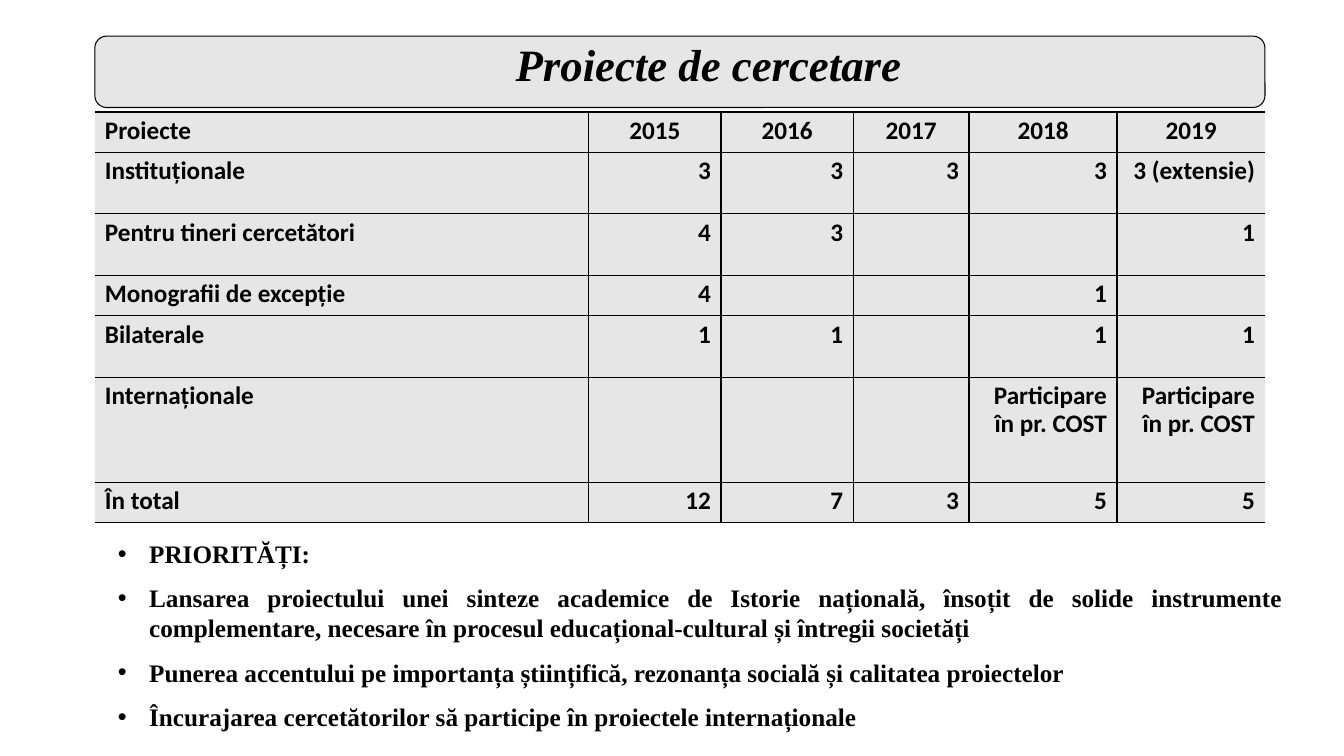
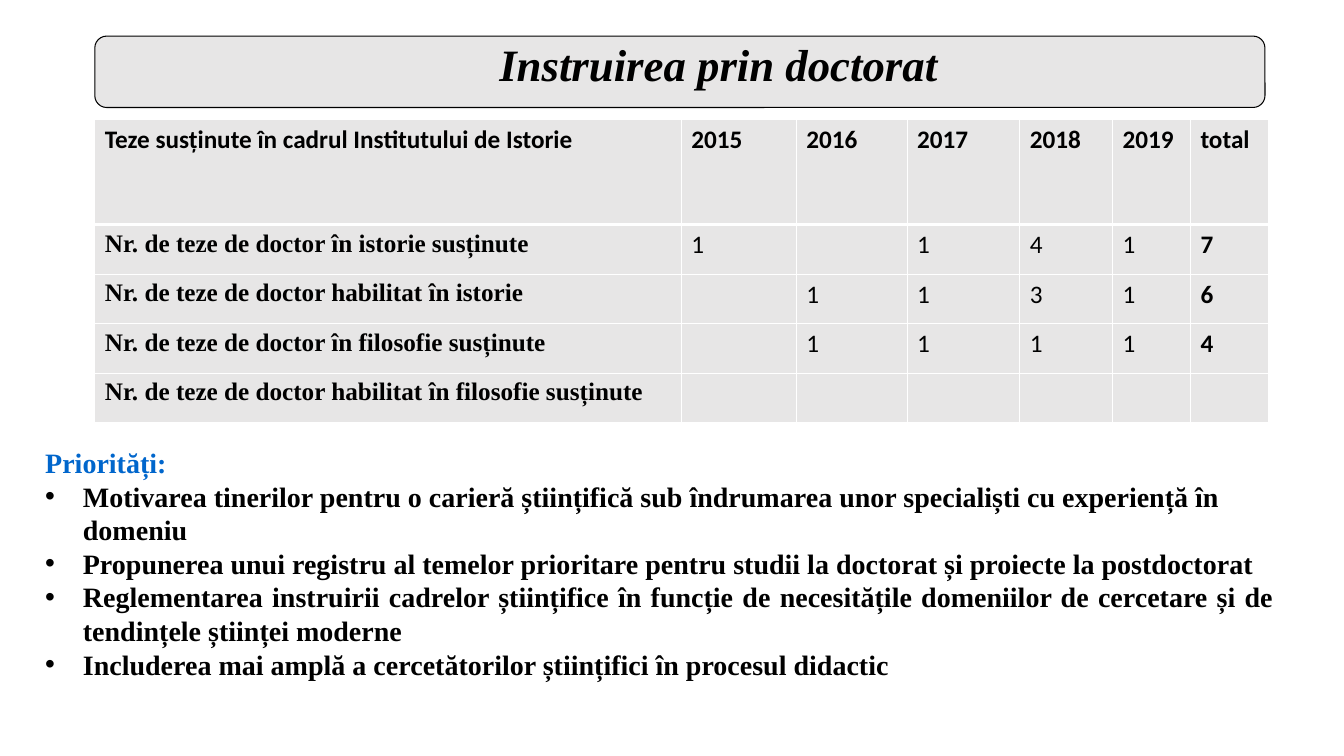
from lxml.etree import SubElement as Sub
from pptx import Presentation
from pptx.dml.color import RGBColor as Rgb
from pptx.enum.shapes import MSO_SHAPE as Form
from pptx.enum.text import MSO_ANCHOR as Anchor, PP_ALIGN as Align
from pptx.oxml.ns import qn
from pptx.util import Cm, Pt

COLORS = {"ink": "000000", "band": "E7E6E6", "white": "FFFFFF", "blue": "0066CC"}
SERIF, SANS = "Times New Roman", "Calibri"
LEFT = 2.39


def color(name):
    return Rgb.from_string(COLORS[name])


class Deck:
    def __init__(self):
        self.prs = Presentation()
        self.prs.slide_width, self.prs.slide_height = Cm(33.87), Cm(19.05)
        self.slide = None

    def style(self, para, size, font=SERIF, bold=True, tint="ink", italic=False):
        for run in para.runs:
            face = run.font
            face.name, face.size = font, Pt(size)
            face.bold, face.italic = bold, italic
            face.color.rgb = color(tint)

    def box(self, x, y, w, h):
        frame = self.slide.shapes.add_textbox(Cm(x), Cm(y), Cm(w), Cm(h)).text_frame
        frame.word_wrap = True
        return frame

    # New slide with its title band; mid is the centre of the title
    def start(self, title, mid):
        self.slide = self.prs.slides.add_slide(self.prs.slide_layouts[6])
        band = self.slide.shapes.add_shape(
            Form.ROUNDED_RECTANGLE, Cm(LEFT), Cm(0.91), Cm(29.49), Cm(1.8))
        band.shadow.inherit = False
        band.fill.solid()
        band.fill.fore_color.rgb = color("band")
        band.line.color.rgb = color("ink")
        band.line.width = Pt(0.75)
        wide = 25
        frame = self.box(mid - wide / 2, 0.64, wide, 2.08)
        frame.vertical_anchor = Anchor.MIDDLE
        para = frame.paragraphs[0]
        para.text = title
        para.alignment, para.line_spacing = Align.CENTER, 0.9
        self.style(para, 32, italic=True)

    # Cell borders: a width of 0 hides the side
    def edges(self, cell, tint, widths):
        props = cell._tc.get_or_add_tcPr()
        for side, width in zip("LRTB", widths):
            line = Sub(props, qn(f"a:ln{side}"), w=str(Pt(width)))
            if width:
                fill = Sub(line, qn("a:solidFill"))
                Sub(fill, qn("a:srgbClr"), val=COLORS[tint])
            else:
                Sub(line, qn("a:noFill"))

    # look(row, col) gives font, bold and alignment; sides(row, col) the borders
    def table(self, y, cols, rows, data, tint, look, sides, space=1.0):
        table = self.slide.shapes.add_table(
            len(rows), len(cols), Cm(LEFT), Cm(y), Cm(sum(cols)), Cm(sum(rows))).table
        table.first_row = table.horz_banding = False
        for col, width in zip(table.columns, cols):
            col.width = Cm(width)
        for r, (height, words) in enumerate(zip(rows, data)):
            table.rows[r].height = Cm(height)
            for c, word in enumerate(words):
                cell = table.cell(r, c)
                self.edges(cell, tint, sides(r, c))
                cell.fill.solid()
                cell.fill.fore_color.rgb = color("band")
                font, bold, align = look(r, c)
                para = cell.text_frame.paragraphs[0]
                para.text = word
                para.alignment, para.line_spacing = align, space
                self.style(para, 18, font, bold)

    # Items are (text, alignment); a head stands above them without a bullet
    def bullets(self, place, items, size, indent, gap=0, head=None):
        frame = self.box(*place)
        lines = ([(head, Align.LEFT)] if head else []) + items
        for i, (text, align) in enumerate(lines):
            para = frame.add_paragraph() if i else frame.paragraphs[0]
            para.text = text
            para.alignment = align
            para.space_before = Pt(gap if i else 0)
            first = head is not None and i == 0
            self.style(para, size, tint="blue" if first else "ink")
            if not first:
                props = para._p.get_or_add_pPr()
                props.set("marL", str(Cm(indent)))
                props.set("indent", str(-Cm(indent)))
                Sub(props, qn("a:buFont"), typeface="Arial")
                Sub(props, qn("a:buChar"), char="•")


def projects(deck):
    deck.start("Proiecte de cercetare", 17.86)
    data = [
        ["Proiecte", "2015", "2016", "2017", "2018", "2019"],
        ["Instituționale", "3", "3", "3", "3", "3 (extensie)"],
        ["Pentru tineri cercetători", "4", "3", "", "", "1"],
        ["Monografii de excepție", "4", "", "", "1", ""],
        ["Bilaterale", "1", "1", "", "1", "1"],
        ["Internaționale", "", "", "", "Participare în pr. COST",
         "Participare în pr. COST"],
        ["În total", "12", "7", "3", "5", "5"],
    ]

    def look(r, c):
        align = Align.LEFT if c == 0 else Align.RIGHT if r else Align.CENTER
        return SANS, True, align

    def sides(r, c):
        return int(c > 0), int(c < 5), 1, 1

    deck.table(2.82, [12.45, 3.33, 3.33, 2.92, 3.73, 3.73],
               [1.02, 1.55, 1.55, 1.02, 1.55, 2.64, 1.02],
               data, "ink", look, sides, space=0.9)
    goals = [
        "PRIORITĂȚI:",
        "Lansarea proiectului unei sinteze academice de Istorie națională, însoțit de "
        "solide instrumente complementare, necesare în procesul educațional-cultural "
        "și întregii societăți",
        "Punerea accentului pe importanța științifică, rezonanța socială și calitatea "
        "proiectelor",
        "Încurajarea cercetătorilor să participe în proiectele internaționale",
    ]
    deck.bullets((2.72, 13.44, 29.85, 5.26), [(g, Align.JUSTIFY) for g in goals],
                 18, 0.79, gap=10)


def theses(deck):
    deck.start("Instruirea prin doctorat", 18.11)
    data = [
        ["Teze susținute în cadrul Institutului de Istorie",
         "2015", "2016", "2017", "2018", "2019", "total"],
        ["Nr. de teze de doctor în istorie susținute", "1", "", "1", "4", "1", "7"],
        ["Nr. de teze de doctor habilitat în istorie", "", "1", "1", "3", "1", "6"],
        ["Nr. de teze de doctor în filosofie susținute", "", "1", "1", "1", "1", "4"],
        ["Nr. de teze de doctor habilitat în filosofie susținute"] + [""] * 6,
    ]

    def look(r, c):
        return SERIF if r and c == 0 else SANS, r == 0 or c in (0, 6), Align.LEFT

    def sides(r, c):
        return 1, 1, 3 if r == 1 else 1, 3 if r == 0 else 1

    deck.table(3.02, [14.78, 2.9, 2.79, 2.84, 2.34, 1.96, 1.96],
               [2.64] + [1.25] * 4, data, "white", look, sides)
    goals = [
        ("Motivarea tinerilor pentru o carieră științifică sub îndrumarea unor "
         "specialiști cu experiență în domeniu", Align.LEFT),
        ("Propunerea unui registru al temelor prioritare pentru studii la doctorat și "
         "proiecte la postdoctorat", Align.LEFT),
        ("Reglementarea instruirii cadrelor științifice în funcție de necesitățile "
         "domeniilor de cercetare și de tendințele științei moderne", Align.JUSTIFY),
        ("Includerea mai amplă a cercetătorilor științifici în procesul didactic",
         Align.JUSTIFY),
    ]
    deck.bullets((0.89, 11.1, 31.47, 7.4), goals, 20, 0.95, head="Priorități:")


def main():
    deck = Deck()
    projects(deck)
    theses(deck)
    deck.prs.save("out.pptx")


if __name__ == "__main__":
    main()
